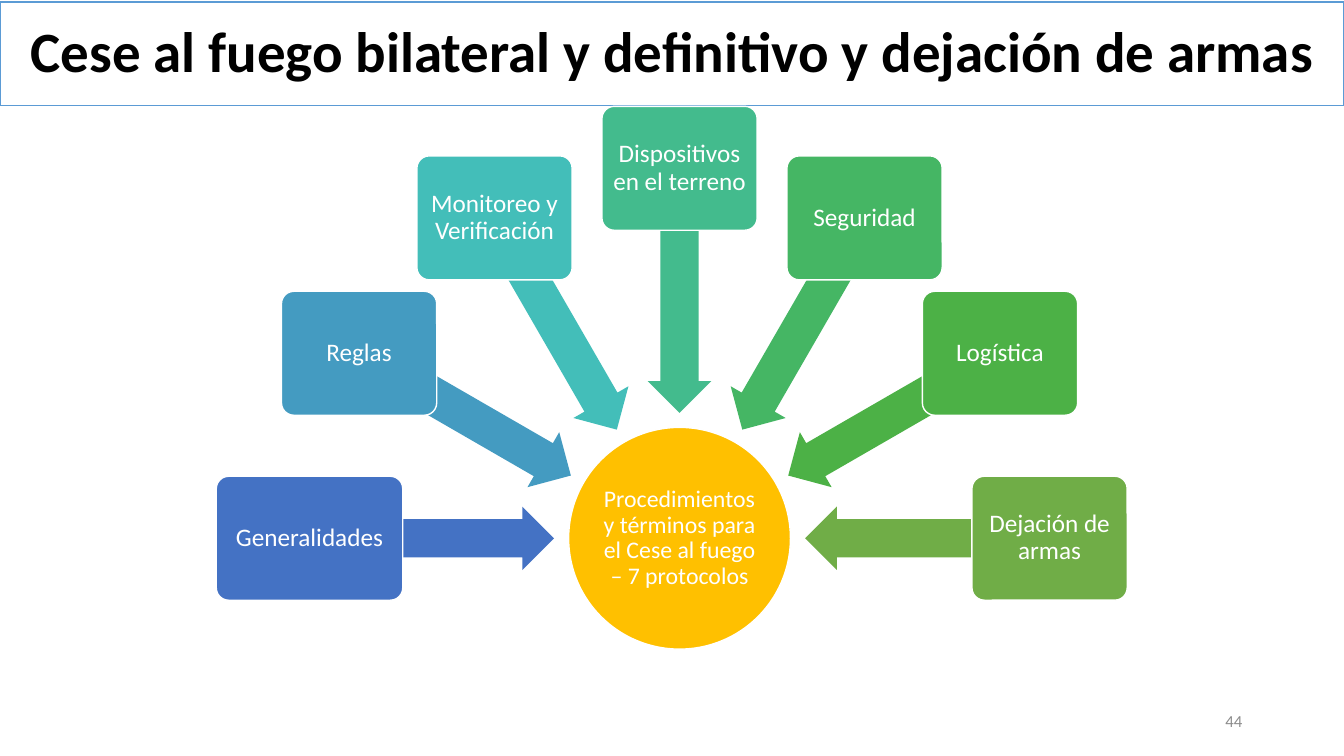
from dataclasses import dataclass
from math import cos, radians, sin

from pptx import Presentation
from pptx.dml.color import RGBColor
from pptx.enum import shapes, text
from pptx.util import Inches, Pt

COLORS = {
    "white": "FFFFFF",
    "black": "000000",
    "border": "5B9BD5",
    "number": "8C8C8C",
    "hub": "FFC000",
    "blue": "4472C4",
    "sky": "449BC1",
    "teal": "43BEB9",
    "mint": "43BB8D",
    "emerald": "45B664",
    "green": "4CB146",
    "olive": "70AD47",
}
FONT = "Calibri"
HUB_X, HUB_Y, HUB_SIZE = 6.74, 5.34, 2.2
ARROW_RADIUS, ARROW_W, ARROW_H = 2.46, 2.43, 0.63
BOX_RADIUS, BOX_H = 3.67, 1.23
FIRST_ANGLE, ANGLE_STEP = 180, 30


@dataclass
class Protocol:
    label: str
    color: str
    width: float = 1.54


PROTOCOLS = [
    Protocol("Generalidades", "blue", 1.85),
    Protocol("Reglas", "sky"),
    Protocol("Monitoreo y Verificación", "teal"),
    Protocol("Dispositivos en el terreno", "mint"),
    Protocol("Seguridad", "emerald"),
    Protocol("Logística", "green"),
    Protocol("Dejación de armas", "olive"),
]


def rgb(name: str) -> RGBColor:
    return RGBColor.from_string(COLORS[name])


def place(sp, left: float, top: float, width: float, height: float) -> None:
    sp.left, sp.top = Inches(left), Inches(top)
    sp.width, sp.height = Inches(width), Inches(height)


def paint(sp, fill: str, line: str) -> None:
    sp.fill.solid()
    sp.fill.fore_color.rgb = rgb(fill)
    sp.line.color.rgb = rgb(line)
    sp.line.width = Pt(1)


def write(sp, content: str, size: float, color: str, align=text.PP_ALIGN.CENTER,
          spacing: float = 0.9, bold: bool = False):
    tf = sp.text_frame
    tf.word_wrap = True
    tf.auto_size = text.MSO_AUTO_SIZE.NONE
    tf.vertical_anchor = text.MSO_ANCHOR.MIDDLE
    p = tf.paragraphs[0]
    p.text = content
    p.alignment = align
    p.line_spacing = spacing
    p.font.name, p.font.size, p.font.bold = FONT, Pt(size), bold
    p.font.color.rgb = rgb(color)
    return tf


def add_centered(s, kind, x: float, y: float, width: float, height: float, fill: str):
    sp = s.shapes.add_shape(kind, Inches(x - width / 2), Inches(y - height / 2),
                            Inches(width), Inches(height))
    sp.shadow.inherit = False
    paint(sp, fill, "white")
    return sp


def add_label(sp, content: str, size: float, inset: float) -> None:
    tf = write(sp, content, size, "white")
    tf.margin_left = tf.margin_right = Inches(inset)
    tf.margin_top = tf.margin_bottom = Inches(inset)


def add_protocol(s, protocol: Protocol, angle: int) -> None:
    dx, dy = cos(radians(angle)), sin(radians(angle))
    arrow = add_centered(s, shapes.MSO_SHAPE.LEFT_ARROW, HUB_X + ARROW_RADIUS * dx,
                         HUB_Y + ARROW_RADIUS * dy, ARROW_W, ARROW_H, protocol.color)
    arrow.line.fill.background()
    arrow.adjustments[0], arrow.adjustments[1] = 0.6, 0.5
    arrow.rotation = angle % 360
    box = add_centered(s, shapes.MSO_SHAPE.ROUNDED_RECTANGLE, HUB_X + BOX_RADIUS * dx,
                       HUB_Y + BOX_RADIUS * dy, protocol.width, BOX_H, protocol.color)
    box.adjustments[0] = 0.1
    add_label(box, protocol.label, 18, 0.04)


def main() -> None:
    prs = Presentation()
    prs.slide_width, prs.slide_height = Inches(13.33), Inches(7.5)
    s = prs.slides.add_slide(prs.slide_layouts[5])

    title = s.shapes.title
    place(title, 0, 0.02, 13.33, 1.03)
    paint(title, "white", "border")
    write(title, "Cese al fuego bilateral y definitivo y dejación de armas",
          40.7, "black", bold=True)

    hub = add_centered(s, shapes.MSO_SHAPE.OVAL, HUB_X, HUB_Y, HUB_SIZE, HUB_SIZE, "hub")
    add_label(hub, "Procedimientos y términos para el Cese al fuego – 7 protocolos", 17, 0.01)

    for i, protocol in enumerate(PROTOCOLS):
        add_protocol(s, protocol, FIRST_ANGLE + i * ANGLE_STEP)

    number = s.shapes.add_textbox(Inches(9.42), Inches(6.95), Inches(3), Inches(0.4))
    write(number, "44", 12, "number", text.PP_ALIGN.RIGHT, 1.0)

    prs.save("out.pptx")


if __name__ == "__main__":
    main()
